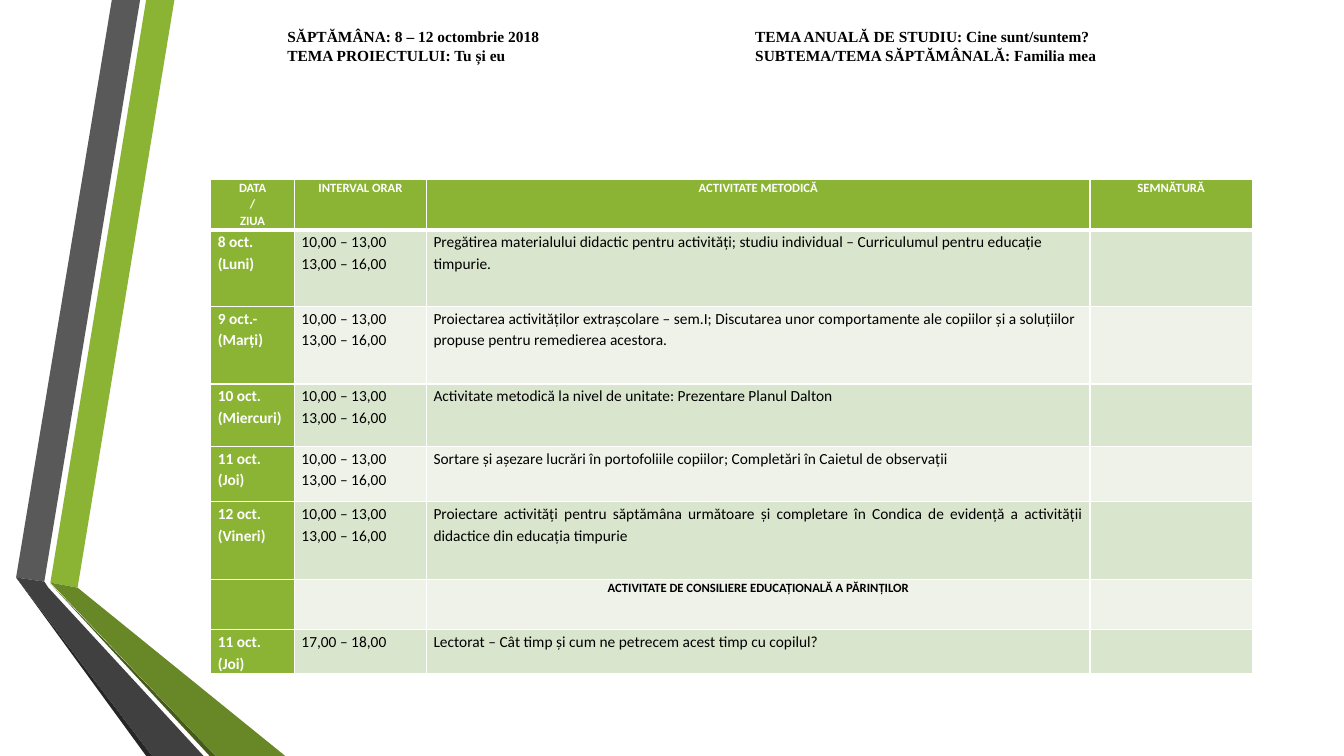
from lxml import etree
from pptx import Presentation
from pptx.dml.color import RGBColor
from pptx.enum import text
from pptx.oxml import ns
from pptx.util import Inches, Pt

WHITE = RGBColor(0xFF, 0xFF, 0xFF)
BLACK = RGBColor(0, 0, 0)
GREEN = RGBColor(0x8B, 0xB4, 0x34)
DARK_GREEN = RGBColor(0x68, 0x87, 0x27)
DEEP_GREEN = RGBColor(0x46, 0x5A, 0x1A)
GREY = RGBColor(0x59, 0x59, 0x59)
DARK_GREY = RGBColor(0x40, 0x40, 0x40)
DEEP_GREY = RGBColor(0x26, 0x26, 0x26)
BANDS = RGBColor(0xDA, 0xE5, 0xCE), RGBColor(0xEE, 0xF2, 0xE8)

LEFT, CENTER, JUSTIFY = (text.PP_ALIGN.LEFT, text.PP_ALIGN.CENTER,
                         text.PP_ALIGN.JUSTIFY)

# Content
HEADING = [
    ("SĂPTĂMÂNA: 8 – 12 octombrie 2018",
     "TEMA ANUALĂ DE STUDIU: Cine sunt/suntem?"),
    ("TEMA PROIECTULUI: Tu și eu",
     "SUBTEMA/TEMA SĂPTĂMÂNALĂ: Familia mea"),
]
HOURS = "10,00 – 13,00\n13,00 – 16,00"
COLUMN_TITLES = ("DATA\n/\nZIUA", "INTERVAL ORAR", "ACTIVITATE METODICĂ",
                 "SEMNĂTURĂ")
SECTION = "ACTIVITATE DE CONSILIERE EDUCAȚIONALĂ A PĂRINȚILOR"
# day, hours, activity, alignment of the activity, row height
SCHEDULE = [
    ("8 oct. (Luni)", HOURS,
     "Pregătirea materialului didactic pentru activități; studiu individual – "
     "Curriculumul pentru educație timpurie.", LEFT, 0.76),
    ("9 oct.-(Marți)", HOURS,
     "Proiectarea activităților extrașcolare – sem.I; Discutarea unor "
     "comportamente ale copiilor și a soluțiilor propuse pentru remedierea "
     "acestora.", LEFT, 0.77),
    ("10 oct. (Miercuri)", HOURS,
     "Activitate metodică la nivel de unitate: Prezentare Planul Dalton",
     LEFT, 0.62),
    ("11 oct. (Joi)", HOURS,
     "Sortare și așezare lucrări în portofoliile copiilor; Completări în "
     "Caietul de observații", JUSTIFY, 0.55),
    ("12 oct. (Vineri)", HOURS,
     "Proiectare activități pentru săptămâna următoare și completare în "
     "Condica de evidență a activității didactice din educația timpurie",
     JUSTIFY, 0.77),
    ("", "", SECTION, CENTER, 0.5),
    ("11 oct. (Joi)", "17,00 – 18,00",
     "Lectorat – Cât timp și cum ne petrecem acest timp cu copilul?",
     JUSTIFY, 0.43),
]
COLUMN_WIDTHS = (0.83, 1.31, 6.58, 1.61)
HEADER_HEIGHT = 0.5

# Ribbon pieces, back to front
RIBBON = [
    (GREEN, [(0.5, 5.78), (0.77, 5.83), (1.73, 0), (1.45, 0)]),
    (GREY, [(1.39, 0), (1.11, 0), (0.16, 5.73), (0.44, 5.77)]),
    (DEEP_GREY, [(0.16, 5.73), (1.45, 7.5), (1.51, 7.5)]),
    (DEEP_GREEN, [(0.5, 5.79), (2.08, 7.5), (2.14, 7.5)]),
    (DARK_GREEN, [(0.5, 5.78), (2.14, 7.5), (2.83, 7.5), (0.77, 5.83)]),
    (DARK_GREY, [(2.02, 7.5), (0.48, 5.83), (0.44, 5.77), (0.16, 5.73),
                 (1.51, 7.5)]),
]


def add_ribbon_piece(slide, color, points):
    corners = [(Inches(x), Inches(y)) for x, y in points]
    builder = slide.shapes.build_freeform(*corners[0], scale=1.0)
    builder.add_line_segments(corners[1:], close=True)
    piece = builder.convert_to_shape()
    piece.shadow.inherit = False
    piece.fill.solid()
    piece.fill.fore_color.rgb = color
    piece.line.fill.background()


def set_font(paragraph, name, size, color, bold):
    font = paragraph.font
    font.name, font.size, font.bold = name, Pt(size), bold
    font.color.rgb = color


def add_tab_stop(paragraph, position):
    stops = etree.SubElement(paragraph._p.get_or_add_pPr(), ns.qn("a:tabLst"))
    etree.SubElement(stops, ns.qn("a:tab"), pos=str(Inches(position)), algn="l")


def set_borders(cell, top, bottom):
    props = cell._tc.get_or_add_tcPr()
    sides = (("L", 1), ("R", 1), ("T", top), ("B", bottom))
    for index, (side, width) in enumerate(sides):
        border = etree.Element(ns.qn("a:ln" + side), w=str(Pt(width)))
        fill = etree.SubElement(border, ns.qn("a:solidFill"))
        etree.SubElement(fill, ns.qn("a:srgbClr"), val=str(WHITE))
        props.insert(index, border)


def fill_cell(cell, content, fill, color, size, bold, align):
    cell.margin_left = cell.margin_right = Inches(0.07)
    cell.margin_top = cell.margin_bottom = 0
    cell.fill.solid()
    cell.fill.fore_color.rgb = fill
    cell.text = content
    for paragraph in cell.text_frame.paragraphs:
        paragraph.alignment = align
        paragraph.line_spacing = 1.15 if size > 9 else 1.07
        set_font(paragraph, "Calibri", size, color, bold)


def add_heading(slide):
    heading = slide.shapes.title
    heading.left, heading.top = Inches(2.75), Inches(0.22)
    heading.width, heading.height = Inches(9.13), Inches(0.47)
    frame = heading.text_frame
    frame.word_wrap = True
    frame.auto_size = text.MSO_AUTO_SIZE.NONE
    frame.vertical_anchor = text.MSO_ANCHOR.MIDDLE
    frame.text = "\n".join("\t".join(pair) for pair in HEADING)
    for paragraph in frame.paragraphs:
        paragraph.alignment = LEFT
        paragraph.space_before = Pt(0)
        add_tab_stop(paragraph, 4.64)
        set_font(paragraph, "Times New Roman", 11, BLACK, True)


def add_schedule(slide):
    heights = [HEADER_HEIGHT] + [row[-1] for row in SCHEDULE]
    table = slide.shapes.add_table(
        len(heights), len(COLUMN_WIDTHS), Inches(2.09), Inches(1.78),
        Inches(sum(COLUMN_WIDTHS)), Inches(sum(heights))).table
    table.horz_banding = False
    table.first_col = True
    for column, width in zip(table.columns, COLUMN_WIDTHS):
        column.width = Inches(width)
    for row, height in zip(table.rows, heights):
        row.height = Inches(height)

    # Header row
    for c, label in enumerate(COLUMN_TITLES):
        fill_cell(table.cell(0, c), label, GREEN, WHITE, 9, True, CENTER)
        set_borders(table.cell(0, c), 1, 3)

    # Days
    for r, (day, hours, activity, align, _) in enumerate(SCHEDULE, 1):
        band = BANDS[(r - 1) % 2]
        section = activity == SECTION
        fill_cell(table.cell(r, 0), day, GREEN, WHITE, 11, True, LEFT)
        fill_cell(table.cell(r, 1), hours, band, BLACK, 11, False, LEFT)
        fill_cell(table.cell(r, 2), activity, band, BLACK,
                  9 if section else 11, section, align)
        fill_cell(table.cell(r, 3), "", band, BLACK, 11, False, LEFT)
        for c in range(len(COLUMN_WIDTHS)):
            set_borders(table.cell(r, c), 3 if r == 1 else 1, 1)


def main():
    deck = Presentation()
    deck.slide_width, deck.slide_height = Inches(13.33), Inches(7.5)
    slide = deck.slides.add_slide(deck.slide_layouts[5])
    for color, points in RIBBON:
        add_ribbon_piece(slide, color, points)
    add_schedule(slide)
    add_heading(slide)
    deck.save("out.pptx")


if __name__ == "__main__":
    main()
